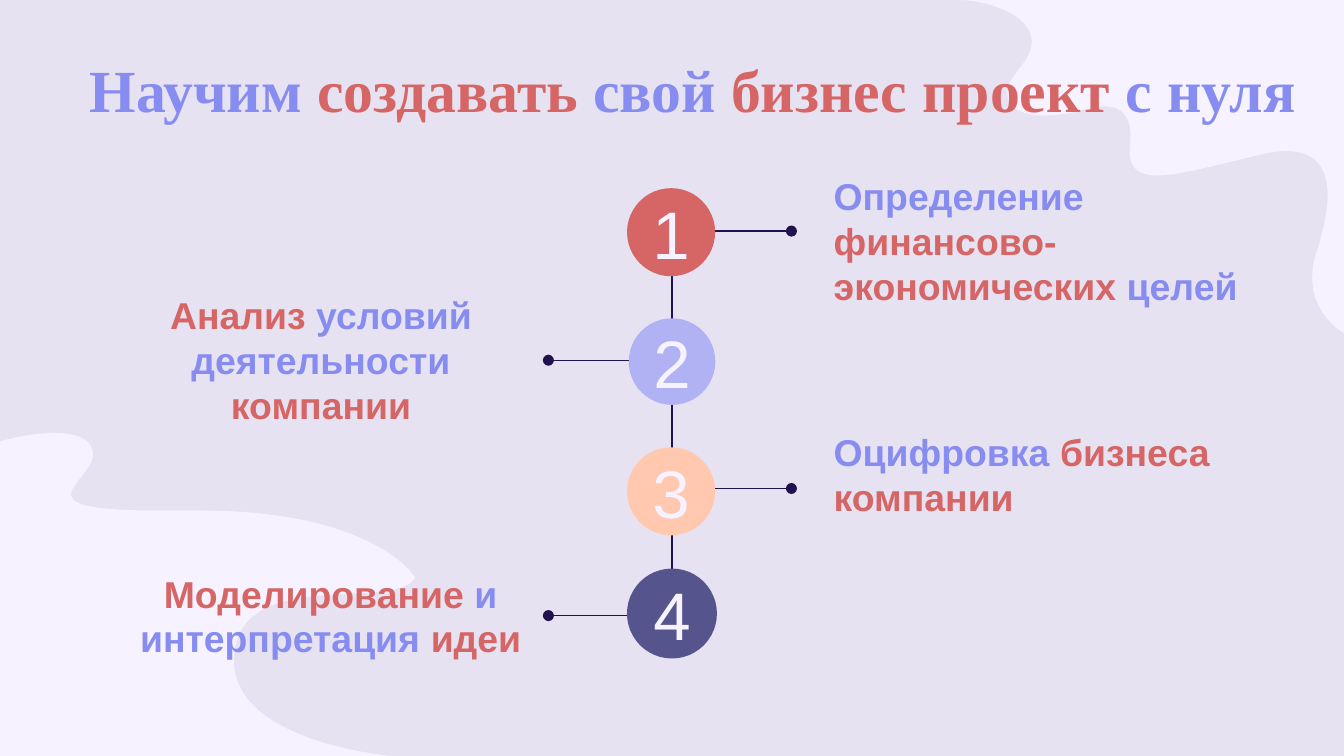
from dataclasses import dataclass
from lxml import etree
from pptx import Presentation
from pptx.dml.color import RGBColor
from pptx.enum.shapes import MSO_CONNECTOR as Connector, MSO_SHAPE as Shape
from pptx.enum.text import MSO_ANCHOR as Anchor, MSO_AUTO_SIZE as AutoSize, PP_ALIGN as Align
from pptx.oxml.ns import qn
from pptx.util import Pt


@dataclass(frozen=True)
class Theme:
    background: RGBColor = RGBColor.from_string("E7E2F2")
    light: RGBColor = RGBColor.from_string("F6F2FF")
    line: RGBColor = RGBColor.from_string("20124D")
    violet: RGBColor = RGBColor.from_string("878CF0")
    red: RGBColor = RGBColor.from_string("D66565")
    lilac: RGBColor = RGBColor.from_string("B1B2F3")
    peach: RGBColor = RGBColor.from_string("FFC8AF")
    indigo: RGBColor = RGBColor.from_string("56548C")
    title_font: str = "Times New Roman"
    body_font: str = "Arial"
    title_size: int = 32
    number_size: int = 36
    body_size: int = 20


theme = Theme()
presentation = Presentation()
presentation.slide_width, presentation.slide_height = Pt(720), Pt(405)
slide = presentation.slides.add_slide(presentation.slide_layouts[5])
slide.background.fill.solid()
slide.background.fill.fore_color.rgb = theme.background


def write_runs(paragraph, runs, font, size, bold=True):
    for text, color in runs:
        run = paragraph.add_run()
        run.text = text
        run.font.name = font
        run.font.size = Pt(size)
        run.font.bold = bold
        run.font.color.rgb = color


def add_line(x1, y1, x2, y2, dot=False):
    line = slide.shapes.add_connector(Connector.STRAIGHT, Pt(x1), Pt(y1), Pt(x2), Pt(y2))
    line.line.color.rgb = theme.line
    line.line.width = Pt(0.75)
    properties = line._element.spPr
    if dot:
        etree.SubElement(properties.find(qn("a:ln")), qn("a:tailEnd"), type="oval")
    etree.SubElement(properties, qn("a:effectLst"))


blobs = [
    [(705, 136), (712, 114.5, 723, 71, 674.5, 83), (626, 94.5, 602.5, 103, 605.5, 76.5),
     (607.5, 52, 589.5, 56, 576, 60), (564.5, 62.5, 545, 64, 540.5, 54),
     (538.5, 49.5, 540, 44, 547, 35.5), (566.5, 11.5, 531, 0, 514, 0),
     (720, 0), (720, 178.5), (720, 178.5, 696, 165.5, 705, 136)],
    [(29.5, 232), (39, 232, 47.5, 234, 49.5, 241), (54.5, 257, 3, 273.5, 85, 273.5),
     (106.5, 273.5), (201.5, 273.5, 222.5, 309.5, 222.5, 309.5),
     (211, 328, 129.5, 303, 125.5, 350.5), (121, 397.5, 209.5, 405, 209.5, 405),
     (0, 405), (0, 236.5), (0, 236.5, 14.5, 232, 29.5, 232)],
]
for start, *segments in blobs:
    builder = slide.shapes.build_freeform(Pt(start[0]), Pt(start[1]))
    builder.add_line_segments([(Pt(s[-2]), Pt(s[-1])) for s in segments], close=True)
    blob = builder.convert_to_shape()
    blob.shadow.inherit = False
    blob.fill.solid()
    blob.fill.fore_color.rgb = theme.light
    blob.line.fill.background()
    edges = list(blob._element.iter(qn("a:lnTo")))
    for edge, segment in zip(edges, segments):
        if len(segment) == 6:
            edge.tag = qn("a:cubicBezTo")
            for index in (0, 2):
                control = etree.Element(qn("a:pt"), x=str(Pt(segment[index]) - blob.left),
                                        y=str(Pt(segment[index + 1]) - blob.top))
                edge.insert(index // 2, control)

title = slide.shapes.title
slide.shapes._spTree.append(title._element)
title.left, title.top, title.width, title.height = Pt(41), Pt(21), Pt(671), Pt(45)
frame = title.text_frame
frame.auto_size = AutoSize.NONE
frame.vertical_anchor = Anchor.TOP
frame.margin_left = frame.margin_right = frame.margin_top = frame.margin_bottom = Pt(7.2)
frame.paragraphs[0].alignment = Align.LEFT
title_runs = [("Научим ", theme.violet), ("создавать", theme.red), (" свой ", theme.violet),
              ("бизнес проект ", theme.red), ("с нуля", theme.violet)]
write_runs(frame.paragraphs[0], title_runs, theme.title_font, theme.title_size)

center = 360
add_line(center, 140, center, 333)

stages = [
    (theme.red, 359.5, 124.4, 47.2, 123.8, Align.LEFT, (439.5, 91.4, 272.2, 74.9),
     [("Определение ", theme.violet), ("финансово-экономических ", theme.red),
      ("целей", theme.violet)]),
    (theme.lilac, 360, 193.7, 46.4, 193, Align.CENTER, (66.5, 166.3, 211, 52.6),
     [("Анализ", theme.red), (" условий деятельности ", theme.violet),
      ("компании", theme.red)]),
    (theme.peach, 359.5, 263.2, 47.2, 261.7, Align.LEFT, (439.5, 237.6, 221, 33.1),
     [("Оцифровка ", theme.violet), ("бизнеса компании", theme.red)]),
    (theme.indigo, 360, 328.7, 48.2, 329.8, Align.CENTER, (65.2, 306, 223.9, 47.5),
     [("Моделирование", theme.red), (" и интерпретация ", theme.violet),
      ("идеи", theme.red)]),
]
for number, stage in enumerate(stages, 1):
    color, middle_x, middle_y, diameter, line_y, alignment, box, runs = stage
    if alignment == Align.LEFT:
        add_line(373.7, line_y, 424, line_y, dot=True)
    else:
        add_line(344.2, line_y, 293.8, line_y, dot=True)

    circle = slide.shapes.add_shape(Shape.OVAL, Pt(middle_x - diameter / 2),
                                    Pt(middle_y - diameter / 2), Pt(diameter), Pt(diameter))
    circle.shadow.inherit = False
    circle.fill.solid()
    circle.fill.fore_color.rgb = color
    circle.line.fill.background()
    frame = circle.text_frame
    frame.margin_left = frame.margin_right = frame.margin_top = frame.margin_bottom = 0
    frame.vertical_anchor = Anchor.MIDDLE
    frame.paragraphs[0].alignment = Align.CENTER
    write_runs(frame.paragraphs[0], [(str(number), theme.light)],
               theme.body_font, theme.number_size, bold=False)

    label = slide.shapes.add_textbox(*map(Pt, box))
    frame = label.text_frame
    frame.word_wrap = True
    frame.vertical_anchor = Anchor.MIDDLE
    frame.margin_left = frame.margin_right = frame.margin_top = frame.margin_bottom = Pt(7.2)
    frame.paragraphs[0].alignment = alignment
    write_runs(frame.paragraphs[0], runs, theme.body_font, theme.body_size)

presentation.save("out.pptx")
